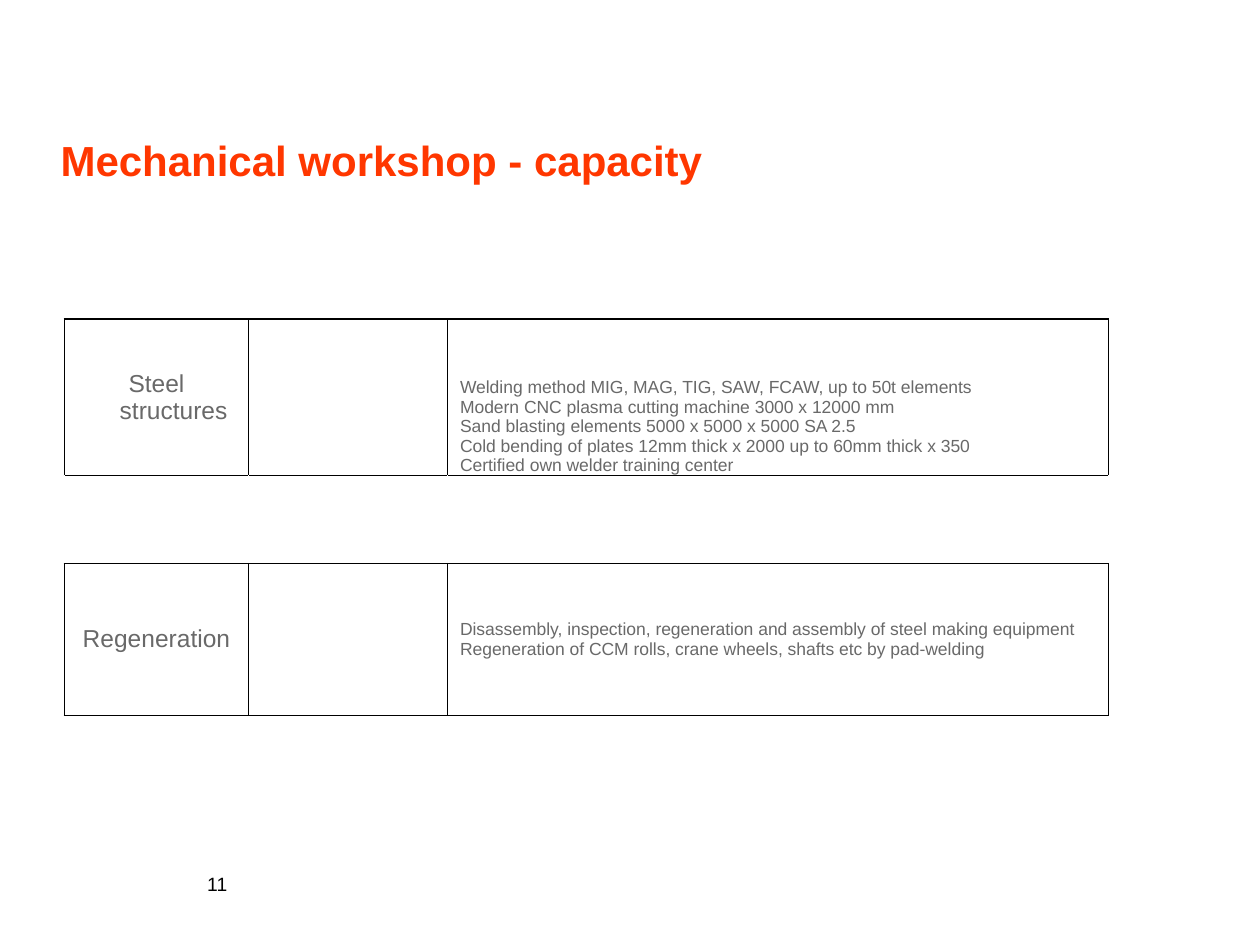
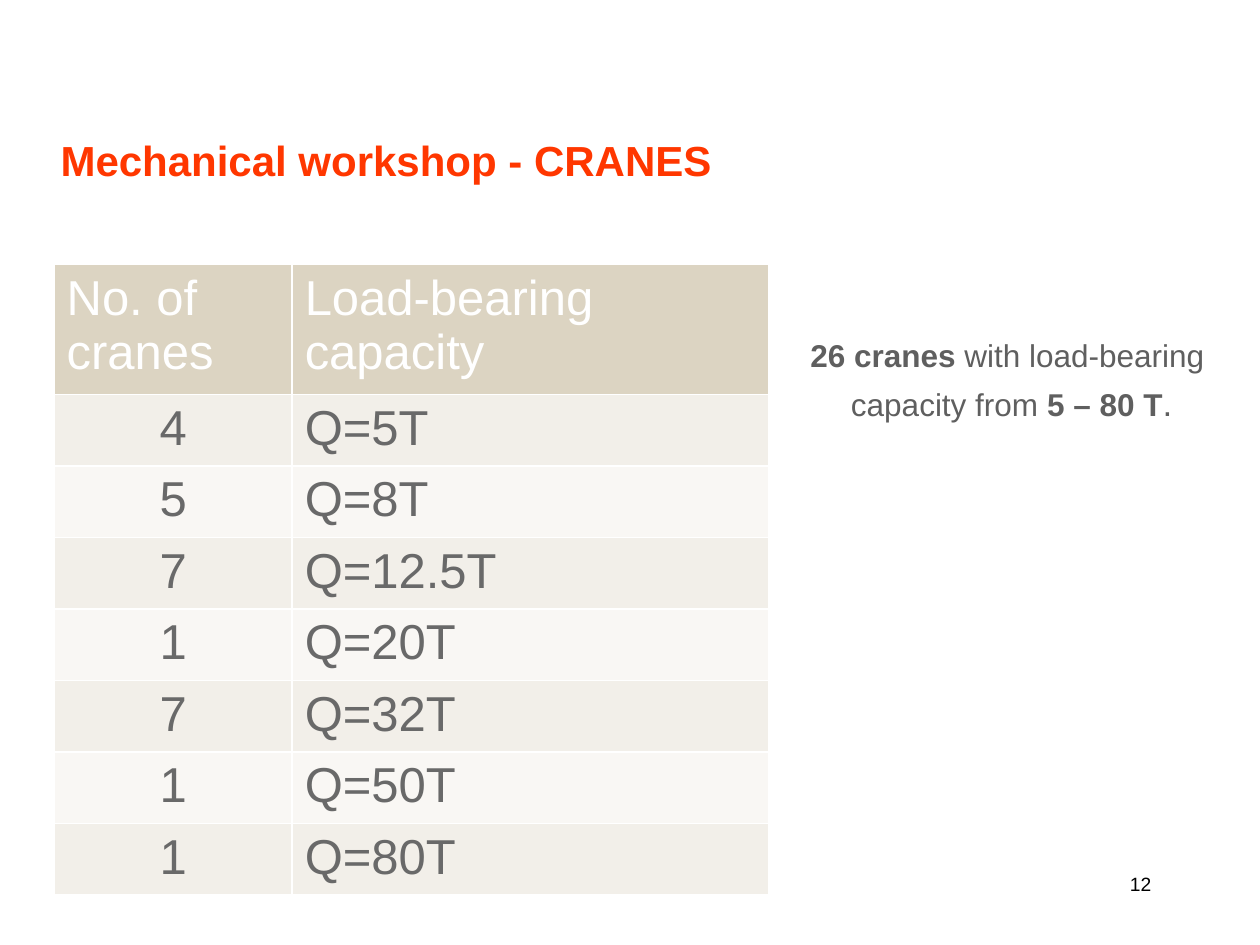
"""Build two slides on the capacity and cranes of a mechanical workshop."""

from dataclasses import dataclass

from lxml import etree
from pptx import Presentation
from pptx.dml.color import RGBColor
from pptx.enum.text import MSO_ANCHOR, MSO_AUTO_SIZE, PP_ALIGN
from pptx.oxml.ns import qn
from pptx.util import Cm, Pt

LEFT, CENTER, RIGHT = PP_ALIGN.LEFT, PP_ALIGN.CENTER, PP_ALIGN.RIGHT
TOP, MIDDLE, BOTTOM = MSO_ANCHOR.TOP, MSO_ANCHOR.MIDDLE, MSO_ANCHOR.BOTTOM
NO_AUTO_SIZE = MSO_AUTO_SIZE.NONE

FONT = "Arial"
ORANGE, GREY, DARK_GREY = "FF3700", "696969", "5F5F5F"
BLACK, WHITE = "000000", "FFFFFF"
SAND, BAND_DARK, BAND_LIGHT = "DCD4C2", "F2EFE9", "F9F7F4"
TITLE_ONLY = 5
HANGING = Cm(0.69)
EDGES = ("L", "R", "T", "B")


@dataclass(frozen=True)
class Area:
    """Place and size in centimetres."""

    left: float
    top: float
    width: float
    height: float

    def lengths(self):
        return [Cm(value) for value in (self.left, self.top, self.width, self.height)]


@dataclass(frozen=True)
class CellStyle:
    """Look of the text in a table cell."""

    size: float
    colour: str = GREY
    align: PP_ALIGN = LEFT
    anchor: MSO_ANCHOR = TOP
    hanging: bool = False


@dataclass(frozen=True)
class Service:
    """One workshop service with its details."""

    name: str
    details: tuple
    anchor: MSO_ANCHOR


SERVICES = {
    0: Service("Steel structures", (
        "Welding method MIG, MAG, TIG, SAW, FCAW, up to 50t elements",
        "Modern CNC plasma cutting machine 3000 x 12000 mm",
        "Sand blasting elements 5000 x 5000 x 5000 SA 2.5",
        "Cold bending of plates 12mm thick x 2000 up to 60mm thick x 350",
        "Certified own welder training center",
    ), BOTTOM),
    2: Service("Regeneration", (
        "Disassembly, inspection, regeneration and assembly of steel making equipment",
        "Regeneration of CCM rolls, crane wheels, shafts etc by pad-welding",
    ), MIDDLE),
}
CRANES = (
    ("No. of cranes", "Load-bearing capacity"),
    ("4", "Q=5T"),
    ("5", "Q=8T"),
    ("7", "Q=12.5T"),
    ("1", "Q=20T"),
    ("7", "Q=32T"),
    ("1", "Q=50T"),
    ("1", "Q=80T"),
)
SUMMARY = (
    (("26 cranes ", True, 18), ("with load-bearing ", False, 18)),
    (("capacity from ", False, 18), ("5 – 80 T", True, 18), (".", False, 20)),
)


def rgb(colour: str) -> RGBColor:
    """Turn a hex string into a colour."""
    return RGBColor.from_string(colour)


def format_span(span, size: float, colour: str, bold: bool = False) -> None:
    """Set the font of a run."""
    span.font.name = FONT
    span.font.size = Pt(size)
    span.font.bold = bold
    span.font.color.rgb = rgb(colour)


def set_margins(frame, margin=0) -> None:
    """Set the same margin on all sides of a text frame."""
    frame.margin_left = frame.margin_right = margin
    frame.margin_top = frame.margin_bottom = margin


def add_page(deck, title: str, title_width: float, number: str, number_area: Area, align):
    """Add a slide with its title and page number."""
    page = deck.slides.add_slide(deck.slide_layouts[TITLE_ONLY])
    box = page.shapes.title
    box.left, box.top, box.width, box.height = Area(1.22, 1.52, title_width, 2.21).lengths()
    footer = page.shapes.add_textbox(*number_area.lengths())
    for shape, text, size, colour, bold, side, anchor in (
        (box, title, 24, ORANGE, True, LEFT, BOTTOM),
        (footer, number, 11, BLACK, False, align, TOP),
    ):
        frame = shape.text_frame
        frame.text = text
        frame.word_wrap = True
        frame.auto_size = NO_AUTO_SIZE
        frame.vertical_anchor = anchor
        set_margins(frame)
        para = frame.paragraphs[0]
        para.alignment = side
        format_span(para.runs[0], size, colour, bold)
    return page


def add_grid(page, left: float, top: float, widths, heights):
    """Add a table without style bands."""
    area = Area(left, top, sum(widths), sum(heights))
    table = page.shapes.add_table(len(heights), len(widths), *area.lengths()).table
    table.first_row = table.horz_banding = False
    for column, width in zip(table.columns, widths):
        column.width = Cm(width)
    for row, height in zip(table.rows, heights):
        row.height = Cm(height)
    return table


def frame_cell(cell, colour: str, edges=EDGES, fill: str = "") -> None:
    """Draw the borders of a cell, then its fill."""
    properties = cell._tc.get_or_add_tcPr()
    for edge in edges:
        line = etree.SubElement(properties, qn(f"a:ln{edge}"), w=str(Pt(1)))
        solid = etree.SubElement(line, qn("a:solidFill"))
        etree.SubElement(solid, qn("a:srgbClr"), val=colour)
    if fill:
        cell.fill.solid()
        cell.fill.fore_color.rgb = rgb(fill)
    else:
        cell.fill.background()


def write_cell(cell, lines, style: CellStyle) -> None:
    """Write one paragraph per line into a cell."""
    cell.text_frame.text = "\n".join(lines)
    cell.vertical_anchor = style.anchor
    if style.hanging:
        cell.margin_top = cell.margin_bottom = 0
    for para in cell.text_frame.paragraphs:
        para.alignment = style.align
        if style.hanging:
            properties = para._p.get_or_add_pPr()
            properties.set("marL", str(HANGING))
            properties.set("indent", str(-HANGING))
        for span in para.runs:
            format_span(span, style.size, style.colour)


def build_capacity(deck) -> None:
    """Build the slide on workshop capacity."""
    page = add_page(deck, "Mechanical workshop - capacity", 15.62,
                    "11", Area(1.22, 17.58, 6.32, 0.76), CENTER)
    table = add_grid(page, 1.3, 6.43, (3.71, 4.01, 13.33), (3.16, 1.77, 3.06))
    for row_index, row in enumerate(table.rows):
        service = SERVICES.get(row_index)
        for cell in row.cells:
            frame_cell(cell, BLACK, EDGES if service else ("T", "B"))
        if service:
            write_cell(row.cells[0], [service.name],
                       CellStyle(14, align=CENTER, anchor=MIDDLE, hanging=True))
            write_cell(row.cells[2], service.details,
                       CellStyle(10, anchor=service.anchor, hanging=True))


def add_summary(page) -> None:
    """Add the sentence that sums up the cranes."""
    frame = page.shapes.add_textbox(*Area(15.9, 6.53, 8.99, 2.06).lengths()).text_frame
    frame.word_wrap = True
    frame.margin_top = Cm(0.25)
    for index, pieces in enumerate(SUMMARY):
        para = frame.add_paragraph() if index else frame.paragraphs[0]
        para.alignment = CENTER
        if index:
            para.space_before = Pt(4)
        for text, bold, size in pieces:
            span = para.add_run()
            span.text = text
            format_span(span, size, DARK_GREY, bold)


def build_cranes(deck) -> None:
    """Build the slide on the cranes."""
    page = add_page(deck, "Mechanical workshop - CRANES", 22.89,
                    "12", Area(17.93, 17.58, 5.28, 0.76), RIGHT)
    add_summary(page)
    heights = [2.62] + [1.44] * (len(CRANES) - 1)
    table = add_grid(page, 1.09, 5.33, (4.8, 9.6), heights)
    table.first_row = True
    for row_index, texts in enumerate(CRANES):
        band = BAND_DARK if row_index % 2 else BAND_LIGHT
        for column_index, text in enumerate(texts):
            cell = table.cell(row_index, column_index)
            is_count = row_index > 0 and column_index == 0
            frame_cell(cell, WHITE, fill=band if row_index else SAND)
            write_cell(cell, [text], CellStyle(28, GREY if row_index else WHITE,
                                               CENTER if is_count else LEFT))


def main() -> None:
    """Build and save the deck."""
    deck = Presentation()
    deck.slide_width, deck.slide_height = Cm(25.4), Cm(19.05)
    build_capacity(deck)
    build_cranes(deck)
    deck.save("out.pptx")


if __name__ == "__main__":
    main()
